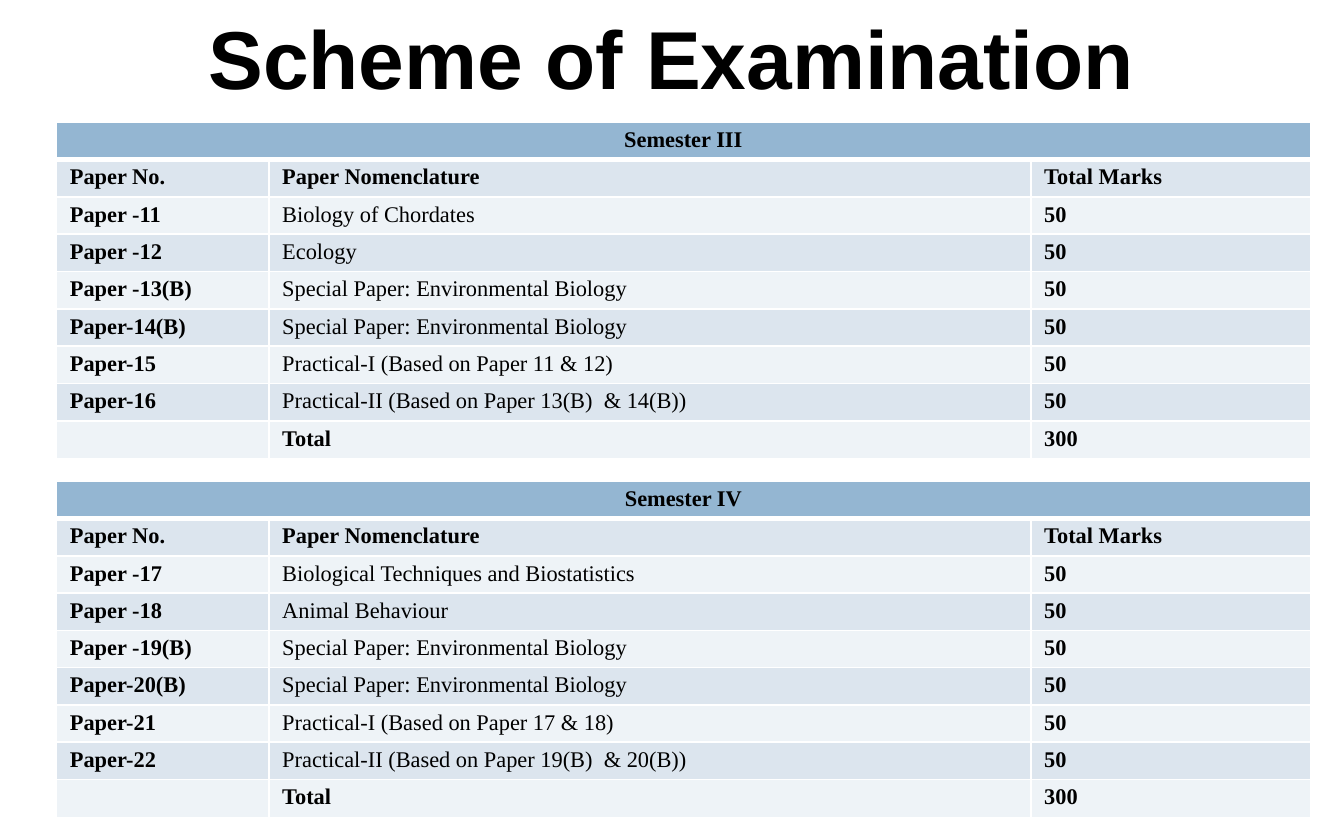
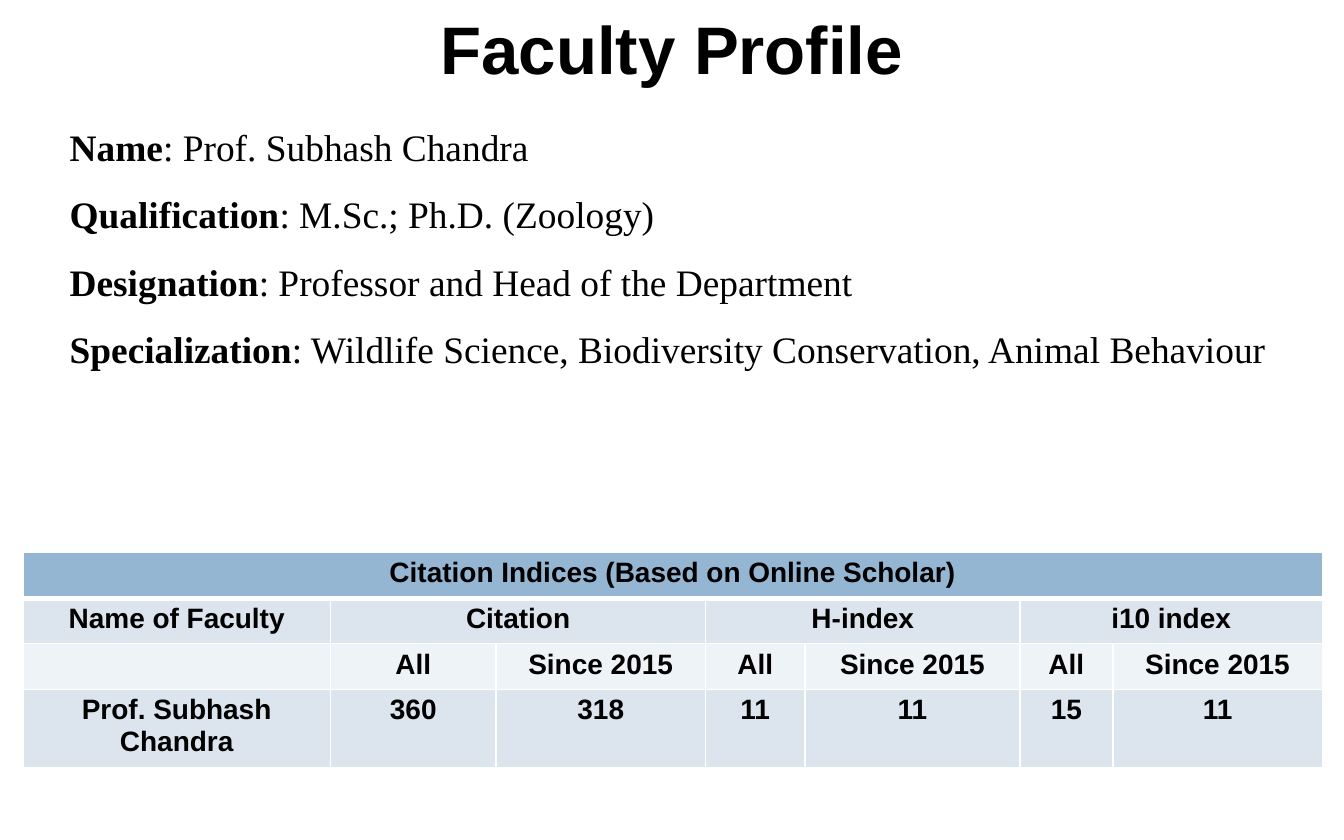
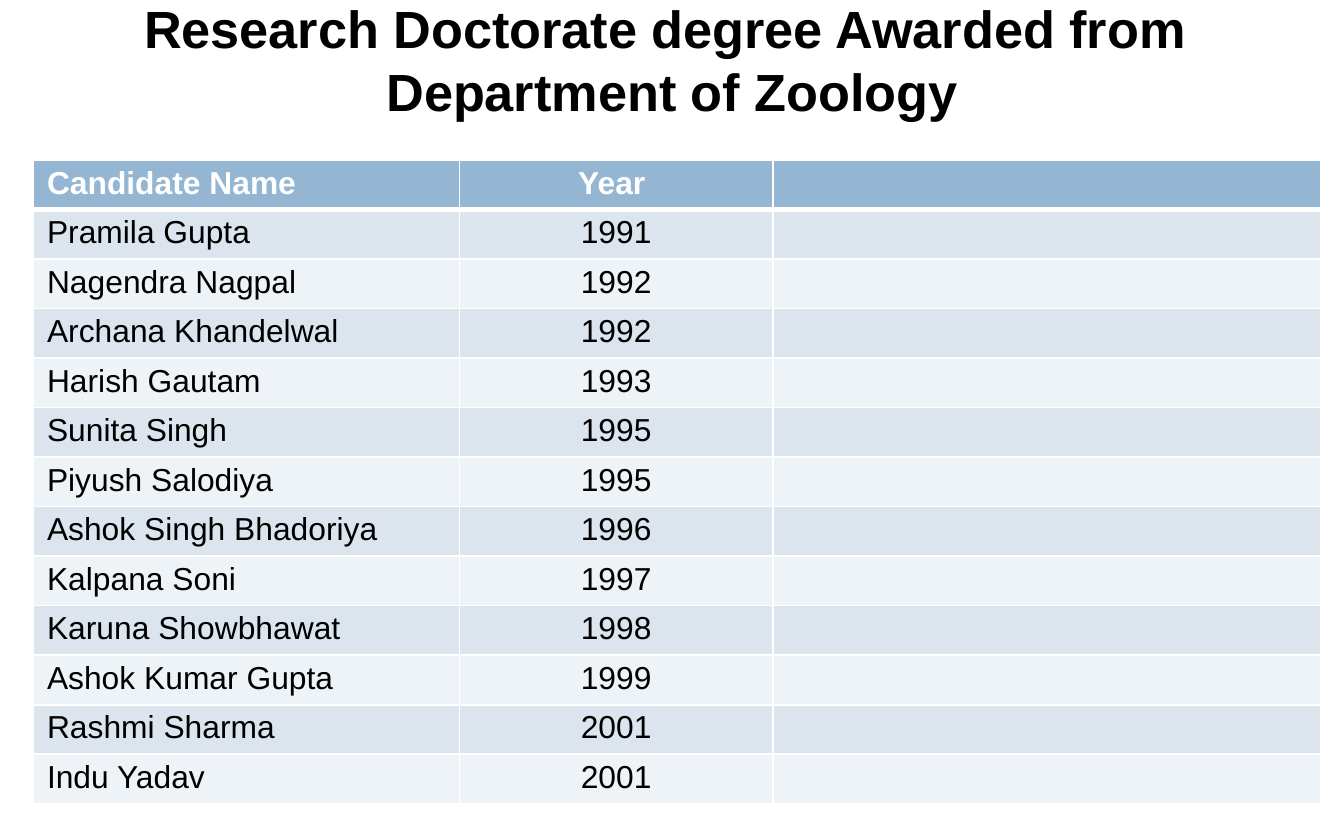
"""Build three slides on a zoology department: exams, faculty and doctorates."""
import dataclasses
import typing

import lxml.etree
import pptx
import pptx.dml.color
import pptx.enum.text
import pptx.oxml.ns
import pptx.util

Inches = pptx.util.Inches
Pt = pptx.util.Pt
Align = pptx.enum.text.PP_ALIGN
LEFT, CENTER = Align.LEFT, Align.CENTER
qn = pptx.oxml.ns.qn


@dataclasses.dataclass(frozen=True)
class Theme:
    """Colours, fonts and type sizes of the deck."""
    black: str = "000000"
    white: str = "FFFFFF"
    head: str = "94B6D2"
    bands: tuple[str, str] = ("EEF3F7", "DCE5EE")
    sans: str = "Arial"
    serif: str = "Times New Roman"
    title: int = 44
    second: int = 36
    third: int = 28
    body: int = 20
    exam: int = 12
    index: int = 15
    award: int = 17
    thin: int = 1
    thick: int = 3


THEME = Theme()


@dataclasses.dataclass(frozen=True)
class Grid:
    """A banded table; a None cell joins the cell on its left."""
    left: float
    top: float
    cols: tuple[float, ...]
    heights: tuple[float, ...]
    rows: list[tuple[typing.Optional[str], ...]]
    size: int
    font: str
    aligns: tuple[Align, ...]
    ink: str = THEME.black
    light: typing.Callable[[int, int], bool] = lambda row, col: False


def write(para, text: str, *, size: int, font: str = THEME.sans, color: str = THEME.black,
          bold: bool = True, align: Align = LEFT) -> None:
    """Add formatted text to a paragraph, breaking lines at newlines."""
    para.alignment = align
    for pos, line in enumerate(text.split("\n")):
        if pos:
            para.add_line_break()
        run = para.add_run()
        run.text = line
        run.font.size = Pt(size)
        run.font.name = font
        run.font.bold = bold
        run.font.color.rgb = pptx.dml.color.RGBColor.from_string(color)


def edge(cell, top: int, bottom: int) -> None:
    """Give a cell white borders with the top and bottom widths in points."""
    props = cell._tc.get_or_add_tcPr()
    widths = {"lnL": THEME.thin, "lnR": THEME.thin, "lnT": top, "lnB": bottom}
    for tag, width in widths.items():
        line = lxml.etree.SubElement(props, qn(f"a:{tag}"), w=str(Pt(width)))
        fill = lxml.etree.SubElement(line, qn("a:solidFill"))
        lxml.etree.SubElement(fill, qn("a:srgbClr"), val=THEME.white)


def draw(slide, grid: Grid) -> None:
    """Draw a grid as a table."""
    table = slide.shapes.add_table(
        len(grid.rows), len(grid.cols), Inches(grid.left), Inches(grid.top),
        Inches(sum(grid.cols)), Inches(sum(grid.heights))).table
    table.horz_banding = False
    for col, width in zip(table.columns, grid.cols):
        col.width = Inches(width)
    for row, height in zip(table.rows, grid.heights):
        row.height = Inches(height)
    for r, texts in enumerate(grid.rows):
        for c, text in enumerate(texts):
            cell = table.cell(r, c)
            cell.margin_top = cell.margin_bottom = Inches(0.04)
            edge(cell, THEME.thick if r == 1 else THEME.thin,
                 THEME.thick if r == 0 else THEME.thin)
            cell.fill.solid()
            shade = THEME.bands[r % 2] if r else THEME.head
            cell.fill.fore_color.rgb = pptx.dml.color.RGBColor.from_string(shade)
            para = cell.text_frame.paragraphs[0]
            if text:
                whole = None in texts and c == 0
                write(para, text, size=grid.size, font=grid.font,
                      color=THEME.black if r else grid.ink,
                      bold=not grid.light(r, c),
                      align=CENTER if whole else grid.aligns[c])
            else:
                lxml.etree.SubElement(para._p, qn("a:endParaRPr"), sz=str(grid.size * 100))
        merge(table, r, texts)


def merge(table, row: int, texts: tuple[typing.Optional[str], ...]) -> None:
    """Join each text cell of a row with the None cells after it."""
    starts = [c for c, text in enumerate(texts) if text is not None]
    for start, stop in zip(starts, starts[1:] + [len(texts)]):
        if stop - start > 1:
            table.cell(row, start).merge(table.cell(row, stop - 1))


def begin(deck, text: str, top: float, height: float, size: int):
    """Add a title-only slide and set its title."""
    slide = deck.slides.add_slide(deck.slide_layouts[5])
    title = slide.shapes.title
    title.left, title.top = Inches(0), Inches(top)
    title.width, title.height = Inches(10), Inches(height)
    frame = title.text_frame
    frame.auto_size = pptx.enum.text.MSO_AUTO_SIZE.NONE
    frame.vertical_anchor = pptx.enum.text.MSO_ANCHOR.MIDDLE
    write(frame.paragraphs[0], text, size=size, align=CENTER)
    return slide


def term(name: str, top: float, first: int, topics: tuple[str, str]) -> Grid:
    """Lay out the six papers of one semester, numbered from first."""
    a, b, c, d, e, f = range(first, first + 6)
    special = "Special Paper: Environmental Biology"
    papers = [
        (f"Paper -{a}", topics[0]),
        (f"Paper -{b}", topics[1]),
        (f"Paper -{c}(B)", special),
        (f"Paper-{d}(B)", special),
        (f"Paper-{e}", f"Practical-I (Based on Paper {a} & {b})"),
        (f"Paper-{f}", f"Practical-II (Based on Paper {c}(B)  & {d}(B))"),
    ]
    rows = [(f"Semester {name}", None, None),
            ("Paper No.", "Paper Nomenclature", "Total Marks"),
            *((*paper, "50") for paper in papers),
            ("", "Total", "300")]
    return Grid(0.42, top, (1.58, 5.67, 2.08), (2.5 / len(rows),) * len(rows), rows,
                THEME.exam, THEME.serif, (LEFT,) * 3,
                light=lambda row, col: col == 1 and 2 <= row <= 7)


def exams(deck) -> None:
    """Add the slide on the scheme of examination."""
    slide = begin(deck, "Scheme of Examination", -0.03, 0.9, THEME.title)
    draw(slide, term("III", 0.91, 11, ("Biology of Chordates", "Ecology")))
    draw(slide, term("IV", 3.58, 17,
                     ("Biological Techniques and Biostatistics", "Animal Behaviour")))


def profile(deck) -> None:
    """Add the slide on the faculty."""
    slide = begin(deck, "Faculty Profile", 0, 0.71, THEME.second)
    facts = {
        "Name": "Prof. Subhash Chandra",
        "Qualification": "M.Sc.; Ph.D. (Zoology)",
        "Designation": "Professor and Head of the Department",
        "Specialization": "Wildlife Science, Biodiversity Conservation, Animal Behaviour",
    }
    frame = slide.shapes.add_textbox(
        Inches(0.42), Inches(0.71), Inches(9.33), Inches(2.63)).text_frame
    frame.word_wrap = True
    for pos, (label, fact) in enumerate(facts.items()):
        para = frame.add_paragraph() if pos else frame.paragraphs[0]
        para.line_spacing = 1.5
        write(para, label, size=THEME.body, font=THEME.serif)
        write(para, f": {fact}", size=THEME.body, font=THEME.serif, bold=False)
    rows = [
        ("Citation Indices (Based on Online Scholar)", *(None,) * 6),
        ("Name of Faculty", "Citation", None, "H-index", None, "i10 index", None),
        ("", *("All", "Since 2015") * 3),
        ("Prof. Subhash Chandra", "360", "318", "11", "11", "15", "11"),
    ]
    draw(slide, Grid(0.17, 4.11, (2.29, 1.23, 1.56, 0.74, 1.6, 0.69, 1.56),
                     (0.34, 0.34, 0.34, 0.58), rows, THEME.index, THEME.sans,
                     (CENTER,) * 7))


def awards(deck) -> None:
    """Add the slide on the doctorates awarded."""
    slide = begin(deck, "Research Doctorate degree Awarded from \nDepartment of Zoology",
                  0, 0.88, THEME.third)
    people = [
        ("Pramila Gupta", 1991), ("Nagendra Nagpal", 1992),
        ("Archana Khandelwal", 1992), ("Harish Gautam", 1993),
        ("Sunita Singh", 1995), ("Piyush Salodiya", 1995),
        ("Ashok Singh Bhadoriya", 1996), ("Kalpana Soni", 1997),
        ("Karuna Showbhawat", 1998), ("Ashok Kumar Gupta", 1999),
        ("Rashmi Sharma", 2001), ("Indu Yadav", 2001),
    ]
    rows = [("Candidate Name", "Year ", ""),
            *((name, str(year), "") for name, year in people)]
    draw(slide, Grid(0.25, 1.19, (3.17, 2.33, 4.08), (0.36,) * len(rows), rows,
                     THEME.award, THEME.sans, (LEFT, CENTER, LEFT), ink=THEME.white,
                     light=lambda row, col: row > 0))


def main() -> None:
    """Build and save the deck."""
    deck = pptx.Presentation()
    deck.slide_width, deck.slide_height = Inches(10), Inches(6.25)
    exams(deck)
    profile(deck)
    awards(deck)
    deck.save("out.pptx")


if __name__ == "__main__":
    main()
